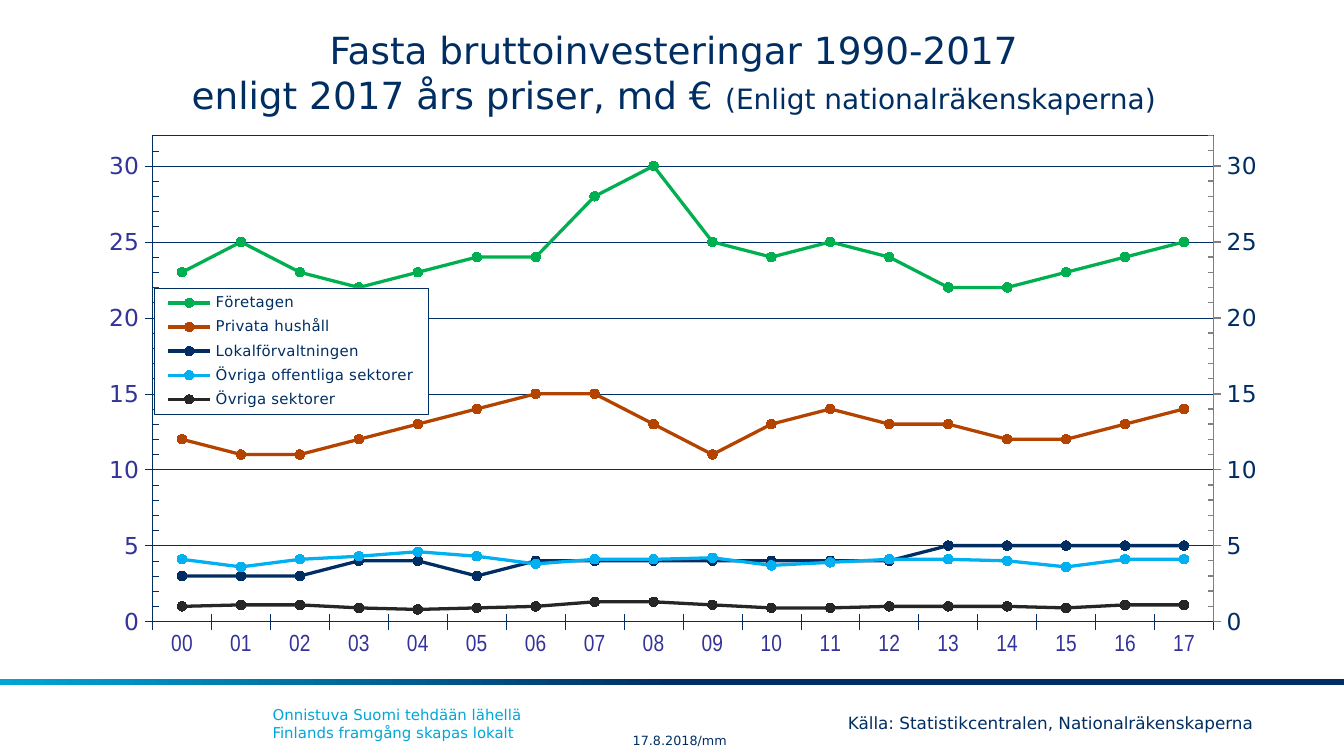
from collections import namedtuple
from copy import deepcopy

from pptx import Presentation
from pptx.chart.axis import ValueAxis
from pptx.chart.data import CategoryChartData
from pptx.dml.color import RGBColor
from pptx.enum.chart import XL_CHART_TYPE, XL_LEGEND_POSITION, XL_MARKER_STYLE, XL_TICK_MARK
from pptx.enum.dml import MSO_LINE
from pptx.enum.shapes import MSO_SHAPE
from pptx.enum.text import MSO_ANCHOR, PP_ALIGN
from pptx.oxml import parse_xml
from pptx.oxml.ns import nsdecls, qn
from pptx.util import Inches, Pt

LINES = XL_CHART_TYPE.LINE_MARKERS
RIGHT = XL_LEGEND_POSITION.RIGHT
CIRCLE = XL_MARKER_STYLE.CIRCLE
CROSS, INSIDE, OUTSIDE = XL_TICK_MARK.CROSS, XL_TICK_MARK.INSIDE, XL_TICK_MARK.OUTSIDE
DOTS = MSO_LINE.ROUND_DOT
RECT = MSO_SHAPE.RECTANGLE
CENTER, LEFT = PP_ALIGN.CENTER, PP_ALIGN.LEFT
TOP, BOTTOM = MSO_ANCHOR.TOP, MSO_ANCHOR.BOTTOM

Theme = namedtuple("Theme", "navy sky violet gray sans narrow title sub axis source small date")
THEME = Theme("002E63", "00A6D6", "333399", "808080", "DejaVu Sans", "Arial Narrow",
              20, 15, 12.5, 9, 8, 6.8)

YEARS = [f"{year:02d}" for year in range(18)]
SERIES = [
    ("Företagen", "00B050",
     [23, 25, 23, 22, 23, 24, 24, 28, 30, 25, 24, 25, 24, 22, 22, 23, 24, 25]),
    ("Privata hushåll", "B54300",
     [12, 11, 11, 12, 13, 14, 15, 15, 13, 11, 13, 14, 13, 13, 12, 12, 13, 14]),
    ("Lokalförvaltningen", "002E63",
     [3, 3, 3, 4, 4, 3, 4, 4, 4, 4, 4, 4, 4, 5, 5, 5, 5, 5]),
    ("Övriga offentliga sektorer", "00B0F0",
     [4.1, 3.6, 4.1, 4.3, 4.6, 4.3, 3.8, 4.1, 4.1,
      4.2, 3.7, 3.9, 4.1, 4.1, 4, 3.6, 4.1, 4.1]),
    ("Övriga sektorer", "262626",
     [1, 1.1, 1.1, 0.9, 0.8, 0.9, 1, 1.3, 1.3,
      1.1, 0.9, 0.9, 1, 1, 1, 0.9, 1.1, 1.1]),
]
SPLIT = 3


def color(code):
    """Turn a hex code into a colour."""
    return RGBColor.from_string(code)


def style(font, size, code, name=THEME.sans):
    """Set the size, colour and face of a font."""
    font.size, font.name, font.bold = Pt(size), name, False
    font.color.rgb = color(code)


def stroke(line, code, width):
    """Set the colour and width of a line."""
    line.color.rgb = color(code)
    line.width = Pt(width)


def add_text(slide, text, box, size, code=THEME.navy, align=LEFT, anchor=TOP,
             inset=0.1, tail="", tail_size=None):
    """Add a text box, with an optional tail in another size."""
    frame = slide.shapes.add_textbox(*map(Inches, box)).text_frame
    frame.word_wrap = True
    frame.vertical_anchor = anchor
    frame.margin_left = frame.margin_right = Inches(inset)
    para = frame.paragraphs[0]
    para.alignment = align
    for row, part in enumerate(text.split("\n")):
        if row:
            para.add_line_break()
        run = para.add_run()
        run.text = part
        style(run.font, size, code)
    if tail:
        run = para.add_run()
        run.text = tail
        style(run.font, tail_size, code)


def add_band(slide):
    """Add the gradient band above the footer."""
    band = slide.shapes.add_shape(RECT, *map(Inches, (0, 5.05, 10, 0.05)))
    band.shadow.inherit = False
    band.line.fill.background()
    band.fill.gradient()
    band.fill.gradient_angle = 180
    stops = zip(band.fill.gradient_stops, (0.5, 1), (THEME.navy, THEME.sky))
    for stop, place, code in stops:
        stop.position = place
        stop.color.rgb = color(code)


def set_place(parent, index, mode, box):
    """Give a chart part a manual layout."""
    for old in parent.findall(qn("c:layout")):
        parent.remove(old)
    inner = '<c:layoutTarget val="inner"/>' if mode == "inner" else ""
    edges = "".join(f'<c:{key}Mode val="edge"/>' for key in "xy")
    sizes = "".join(f'<c:{key} val="{val}"/>' for key, val in zip("xywh", box))
    parent.insert(index, parse_xml(
        f'<c:layout {nsdecls("c")}><c:manualLayout>{inner}{edges}{sizes}'
        '</c:manualLayout></c:layout>'))


def make_frame(width):
    """Make a white fill with a navy border."""
    return parse_xml(
        f'<c:spPr {nsdecls("c", "a")}><a:solidFill><a:srgbClr val="FFFFFF"/></a:solidFill>'
        f'<a:ln w="{Pt(width)}"><a:solidFill><a:srgbClr val="{THEME.navy}"/></a:solidFill>'
        '</a:ln></c:spPr>')


def style_axes(chart):
    """Format the year axis and the left value axis."""
    years, left = chart.category_axis, chart.value_axis
    for axis, name in ((years, THEME.narrow), (left, THEME.sans)):
        axis.major_tick_mark = CROSS
        style(axis.tick_labels.font, THEME.axis, THEME.violet, name)
        stroke(axis.format.line, THEME.navy, 0.31)
    left.minor_tick_mark = INSIDE
    left.minimum_scale, left.maximum_scale = 0, 32
    left.major_unit, left.minor_unit = 5, 1
    left.tick_labels.number_format = "0"
    left.tick_labels.number_format_is_linked = False
    grid = left.major_gridlines.format.line
    stroke(grid, THEME.navy, 0.25)
    grid.dash_style = DOTS


def add_right(chart):
    """Move the last series to a second axis on the right."""
    first = chart.plots[0]._element
    area = first.getparent()
    second = deepcopy(first)
    first.addnext(second)
    for plot, drop in ((first, slice(SPLIT, None)), (second, slice(SPLIT))):
        for row in plot.findall(qn("c:ser"))[drop]:
            plot.remove(row)
    years, left = area.find(qn("c:catAx")), area.find(qn("c:valAx"))
    base, right = deepcopy(years), deepcopy(left)
    left.addnext(right)
    right.addnext(base)
    ids = {axis.find(qn("c:axId")).get("val"): str(num)
           for num, axis in enumerate((years, left), 501)}
    for part in (second, base, right):
        for tag in ("c:axId", "c:crossAx"):
            for item in part.findall(qn(tag)):
                item.set("val", ids[item.get("val")])
    right.find(qn("c:axPos")).set("val", "r")
    right.find(qn("c:crosses")).set("val", "max")
    ValueAxis(base).visible = False
    axis = ValueAxis(right)
    axis.has_major_gridlines = False
    axis.major_tick_mark = OUTSIDE
    style(axis.tick_labels.font, THEME.axis, THEME.navy)
    stroke(axis.format.line, THEME.gray, 0.75)
    return area


def add_lines(slide):
    """Add the line chart of investments by sector."""
    data = CategoryChartData()
    data.categories = YEARS
    for name, _, vals in SERIES:
        data.add_series(name, vals)
    box = map(Inches, (0.61, 0.87, 8.91, 4.24))
    chart = slide.shapes.add_chart(LINES, *box, data).chart
    chart.has_title = False
    style(chart.font, THEME.axis, THEME.navy)
    chart.plots[0].vary_by_categories = False
    for row, (_, code, _) in zip(chart.plots[0].series, SERIES):
        row.smooth = False
        stroke(row.format.line, code, 1.75)
        row.marker.style, row.marker.size = CIRCLE, 5
        row.marker.format.fill.solid()
        row.marker.format.fill.fore_color.rgb = color(code)
        stroke(row.marker.format.line, code, 0.75)
    style_axes(chart)
    area = add_right(chart)
    set_place(area, 0, "inner", (0.059, 0.033, 0.886, 0.853))
    area.append(make_frame(0.25))
    chart.has_legend = True
    key = chart.legend
    key.position = RIGHT
    key.include_in_layout = False
    style(key.font, THEME.small, THEME.navy)
    set_place(key._element, 1, "outer", (0.06, 0.3, 0.229, 0.222))
    key._element.find(qn("c:txPr")).addprevious(make_frame(0.25))


def main():
    """Build and save the slide."""
    deck = Presentation()
    deck.slide_width, deck.slide_height = Inches(10), Inches(10 * 9 / 16)
    slide = deck.slides.add_slide(deck.slide_layouts[6])
    add_band(slide)
    add_text(slide, "Onnistuva Suomi tehdään lähellä\nFinlands framgång skapas lokalt",
             (1.93, 5.2, 6.54, 0.37), THEME.small, code=THEME.sky)
    add_text(slide, "Fasta bruttoinvesteringar 1990-2017\nenligt 2017 års priser, md € ",
             (1.4, 0.09, 7.23, 0.83), THEME.title, align=CENTER, anchor=BOTTOM, inset=0,
             tail="(Enligt nationalräkenskaperna)", tail_size=THEME.sub)
    add_lines(slide)
    add_text(slide, "Källa: Statistikcentralen, Nationalräkenskaperna",
             (6.21, 5.25, 3.79, 0.25), THEME.source)
    add_text(slide, "17.8.2018/mm", (4.61, 5.4, 1.14, 0.22), THEME.date)
    deck.save("out.pptx")


if __name__ == "__main__":
    main()
